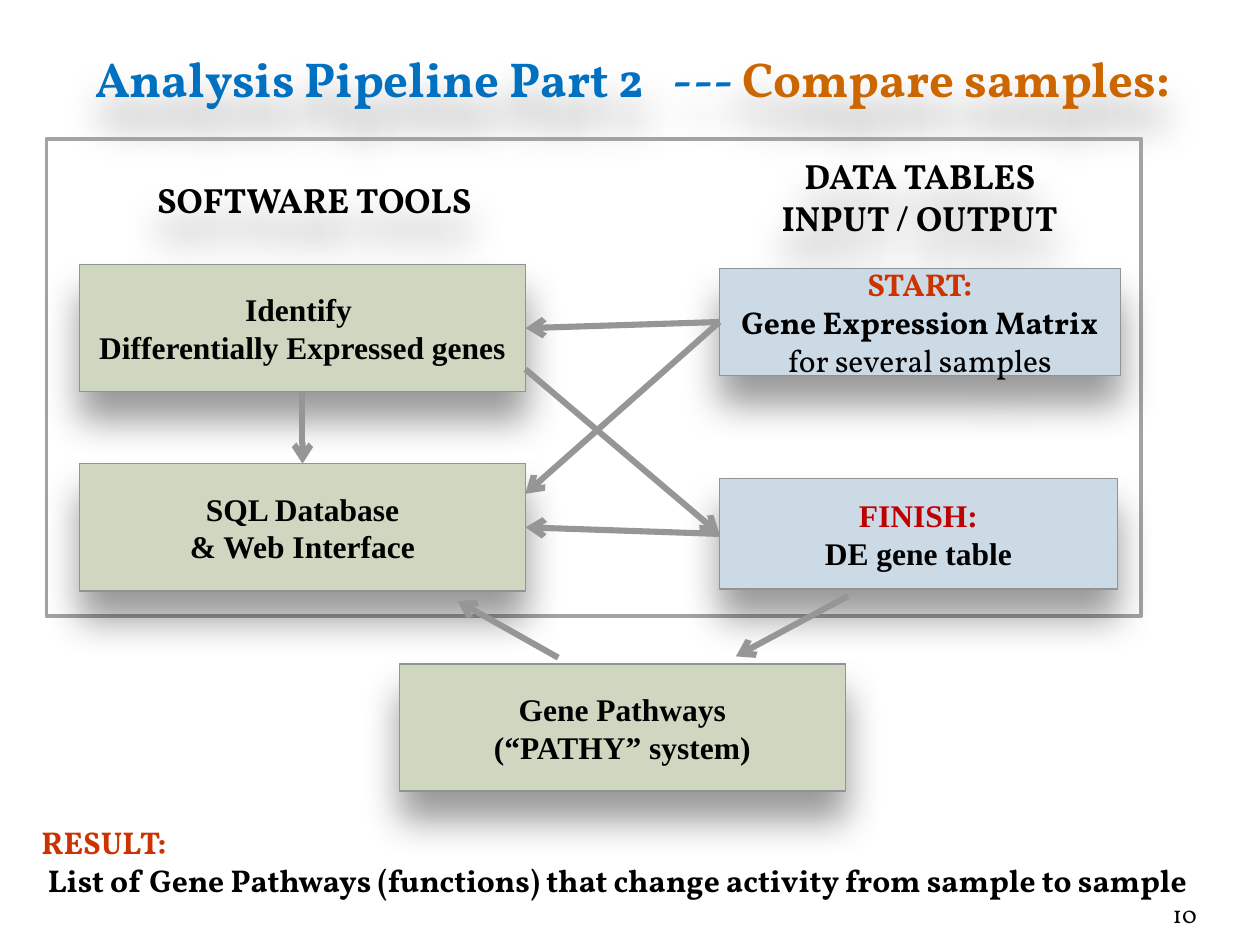
from lxml import etree
from pptx import Presentation
from pptx.dml.color import RGBColor
from pptx.enum import shapes, text
from pptx.oxml import ns
from pptx.util import Pt

BLACK, RED, GREEN, BLUE, GREY = "000000", "CC3300", "D0D7C1", "CCDAE6", "969696"
SERIF, DISPLAY = "Times New Roman", "Vollkorn"
CENTER, LEFT, RIGHT = text.PP_ALIGN.CENTER, text.PP_ALIGN.LEFT, text.PP_ALIGN.RIGHT
MIDDLE = text.MSO_ANCHOR.MIDDLE
TOP_SIDE, LEFT_SIDE, BOTTOM_SIDE, RIGHT_SIDE = range(4)
TOOL_SIZE = (254.9, 72.7)


def rgb(value):
    return RGBColor.from_string(value)


def add_xml(parent, tag, **attributes):
    return etree.SubElement(parent, ns.qn(tag), attributes)


def add_shadow(shape):
    """Soft shadow that falls straight down; without a fill it follows the text."""
    shape.shadow.inherit = False
    effects = shape._element.spPr.find(ns.qn("a:effectLst"))
    outer = add_xml(effects, "a:outerShdw", blurRad=str(Pt(22)), dist=str(Pt(16)),
                    dir="5400000", rotWithShape="0")
    add_xml(add_xml(outer, "a:srgbClr", val=BLACK), "a:alpha", val="40000")


def write(shape, lines, size, font, align=CENTER, anchor=MIDDLE):
    """Each line is a list of (wording, colour, bold) runs."""
    frame = shape.text_frame
    frame.word_wrap = True
    frame.vertical_anchor = anchor
    for index, line in enumerate(lines):
        paragraph = frame.paragraphs[0] if index == 0 else frame.add_paragraph()
        paragraph.alignment = align
        for wording, colour, bold in line:
            run = paragraph.add_run()
            run.text = wording
            run.font.size = Pt(size)
            run.font.name = font
            run.font.bold = bold
            run.font.color.rgb = rgb(colour)


def add_label(slide, bounds, lines, size, align=CENTER, anchor=MIDDLE):
    label = slide.shapes.add_textbox(*map(Pt, bounds))
    write(label, lines, size, DISPLAY, align, anchor)
    return label


def add_rectangle(slide, bounds, line, width, fill=None):
    rectangle = slide.shapes.add_shape(shapes.MSO_SHAPE.RECTANGLE, *map(Pt, bounds))
    rectangle.shadow.inherit = False
    if fill:
        rectangle.fill.solid()
        rectangle.fill.fore_color.rgb = rgb(fill)
    else:
        rectangle.fill.background()
    rectangle.line.color.rgb = rgb(line)
    rectangle.line.width = Pt(width)
    return rectangle


def add_step(slide, bounds, fill, lines, font=SERIF):
    step = add_rectangle(slide, bounds, "939393", 0.75, fill)
    add_shadow(step)
    write(step, lines, 18, font)
    return step


def add_arrow(slide, start, end, source=None, target=None):
    """source and target are (shape, side) pairs to join to."""
    arrow = slide.shapes.add_connector(shapes.MSO_CONNECTOR.STRAIGHT,
                                       *map(Pt, start + end))
    if source:
        arrow.begin_connect(*source)
    if target:
        arrow.end_connect(*target)
    arrow.line.color.rgb = rgb(GREY)
    arrow.line.width = Pt(3.5)
    add_xml(arrow.line._get_or_add_ln(), "a:tailEnd", type="arrow")
    add_xml(arrow._element.spPr, "a:effectLst")


def black_lines(*wordings):
    return [[(wording, BLACK, True)] for wording in wordings]


def add_headings(slide):
    title = [[("Analysis Pipeline Part 2   --- ", "0070C0", True),
              ("Compare samples:", "CC6600", True)]]
    headings = [
        ((38.9, 25.2, 645.1, 38.9), title, 28),
        ((420.5, 85.7, 210.2, 53.3), black_lines("DATA TABLES", "INPUT / OUTPUT"), 20),
        ((46.1, 93.6, 267.1, 41), black_lines("SOFTWARE TOOLS"), 20),
    ]
    for bounds, lines, size in headings:
        add_shadow(add_label(slide, bounds, lines, size))


def add_pipeline(slide):
    add_rectangle(slide, (26.6, 79.2, 625.7, 272.9), "A3A3A3", 2.25)
    add_step(slide, (228.2, 379.4, *TOOL_SIZE), GREEN,
             black_lines("Gene Pathways", "(“PATHY” system)"))
    finish = add_step(slide, (411.1, 273.6, 227.5, 63.0), BLUE,
                      [[("FINISH:", "C00000", True)], *black_lines("DE gene table")])
    identify = add_step(slide, (45.4, 151.2, *TOOL_SIZE), GREEN,
                        black_lines("Identify ", "Differentially Expressed genes"))
    start = add_step(slide, (411.1, 153.4, 229, 61.2), BLUE,
                     [[("START:", RED, True)], *black_lines("Gene Expression Matrix"),
                      [("for several samples", BLACK, False)]], DISPLAY)
    database = add_step(slide, (45.4, 265, *TOOL_SIZE), GREEN,
                        black_lines("SQL Database", "& Web Interface"))

    origin = (0, 0)
    add_arrow(slide, (300.2, 211), origin, target=(finish, LEFT_SIDE))
    add_arrow(slide, origin, (300.2, 282.2), source=(start, LEFT_SIDE))
    for source, target in [
        ((finish, LEFT_SIDE), (database, RIGHT_SIDE)),
        ((start, LEFT_SIDE), (identify, RIGHT_SIDE)),
        ((identify, BOTTOM_SIDE), (database, TOP_SIDE)),
    ]:
        add_arrow(slide, origin, origin, source, target)
    add_arrow(slide, (484.6, 340.6), (420.5, 375.1))
    add_arrow(slide, (319, 375.8), (261.4, 343.4))


def add_footer(slide):
    add_label(slide, (16.6, 466.6, 690.5, 51.1),
              [[("RESULT:", RED, True)],
               *black_lines(" List of Gene Pathways (functions) that change activity"
                            " from sample to sample")],
              18, LEFT, text.MSO_ANCHOR.TOP)
    number = add_label(slide, (624.2, 505.4, 59.8, 28.8), [[("10", BLACK, False)]],
                       14, RIGHT, text.MSO_ANCHOR.BOTTOM)
    number.text_frame.margin_left = number.text_frame.margin_right = Pt(0)


def main():
    presentation = Presentation()
    presentation.slide_width, presentation.slide_height = Pt(720), Pt(540)
    slide = presentation.slides.add_slide(presentation.slide_layouts[6])
    add_headings(slide)
    add_pipeline(slide)
    add_footer(slide)
    presentation.save("out.pptx")


if __name__ == "__main__":
    main()
